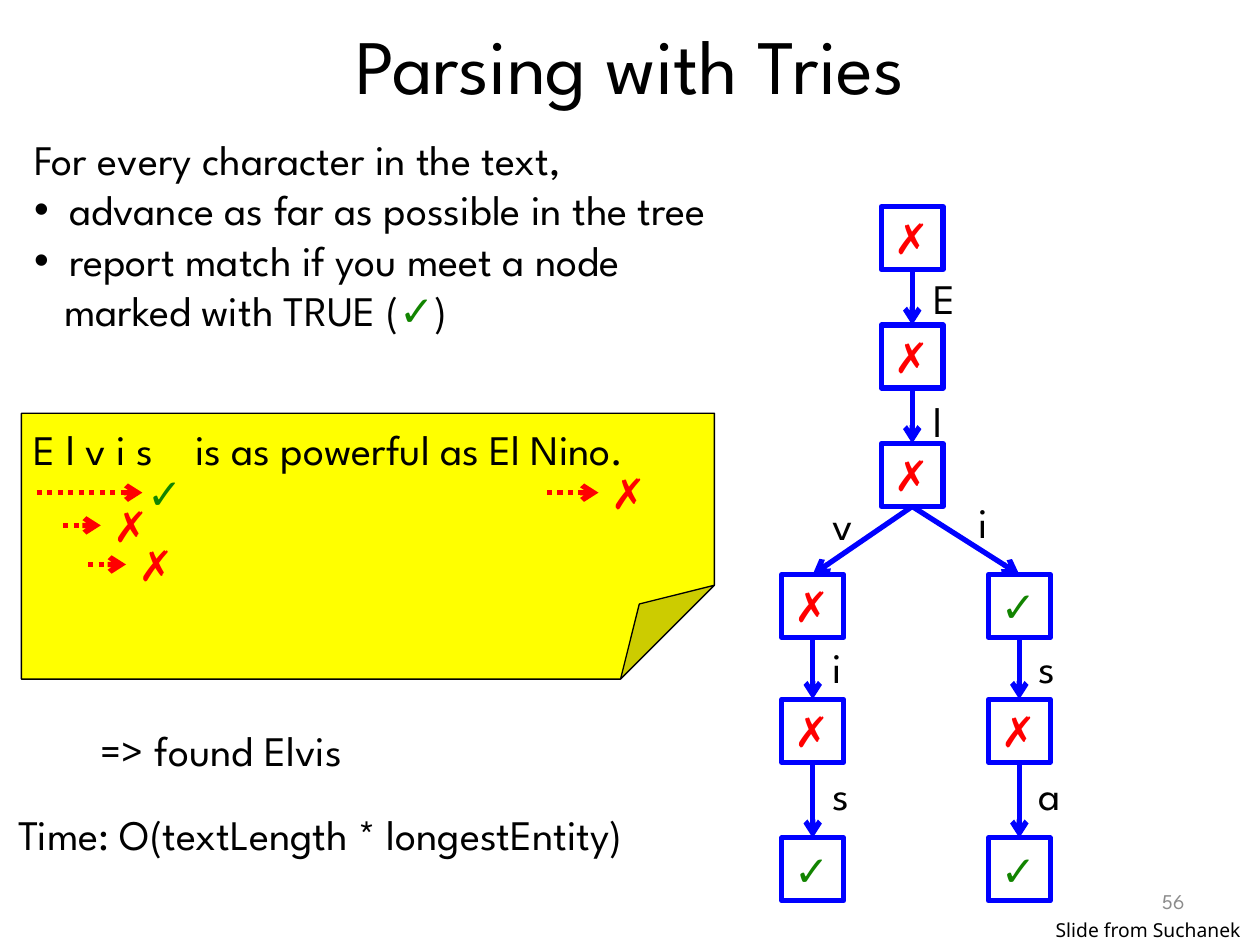
from lxml.etree import SubElement
from pptx import Presentation
from pptx.dml.color import RGBColor
from pptx.enum.dml import MSO_LINE
from pptx.enum.shapes import MSO_CONNECTOR, MSO_SHAPE
from pptx.enum.text import MSO_ANCHOR, MSO_AUTO_SIZE, PP_ALIGN
from pptx.oxml.ns import qn
from pptx.util import Inches, Pt

BLACK = RGBColor(0x00, 0x00, 0x00)
GRAY = RGBColor(0x8C, 0x8C, 0x8C)
RED = RGBColor(0xFF, 0x00, 0x00)
GREEN = RGBColor(0x12, 0x84, 0x00)
BLUE = RGBColor(0x00, 0x01, 0xFF)
YELLOW = RGBColor(0xFF, 0xFF, 0x00)
FONT = "League Spartan"
YES, NO = "✓", "✗"
MARK_COLORS = {YES: GREEN, NO: RED}
BOTTOM, TOP = 2, 0

# Content: (left margin, bulleted, runs)
TITLE = "Parsing with Tries"
STEPS = [
    (0, False, ["For every character in the text,"]),
    (0.28, True, ["advance as far as possible in the tree"]),
    (0.28, True, ["report match if you meet a node"]),
    (0.24, False, ["marked with TRUE (", YES, ")"]),
]
NOTE = "E l v i s\tis as powerful as El Nino."
NOTE_TAB = 1.28
# Scans over the note: arrow start, arrow end, height, mark, mark left
SCANS = [
    (0.29, 1.13, 3.91, YES, 1.07),
    (0.5, 0.8, 4.17, NO, 0.8),
    (0.7, 1, 4.48, NO, 1),
    (4.34, 4.75, 3.91, NO, 4.75),
]
RESULTS = [("=> found Elvis", 0.7, 5.7, 3.17),
           ("Time: O(textLength * longestEntity)", 0.05, 6.37, 6.03)]

# Trie: prefix -> (centre x, top, mark)
STEM, LEFT, RIGHT = 7.24, 6.45, 8.09
NODE_W, NODE_H = 0.49, 0.5
NODES = {
    "": (STEM, 1.64, NO),
    "E": (STEM, 2.58, NO),
    "El": (STEM, 3.52, NO),
    "Elv": (LEFT, 4.56, NO),
    "Elvi": (LEFT, 5.55, NO),
    "Elvis": (LEFT, 6.65, YES),
    "Eli": (RIGHT, 4.56, YES),
    "Elis": (RIGHT, 5.55, NO),
    "Elisa": (RIGHT, 6.65, YES),
}
# Edge letter position, by the prefix the edge leads to
LETTERS = {
    "E": (7.31, 2.11), "El": (7.31, 3.09),
    "Elv": (6.51, 3.91), "Elvi": (6.51, 5.04), "Elvis": (6.51, 6.05),
    "Eli": (7.67, 3.89), "Elis": (8.14, 5.04), "Elisa": (8.14, 6.05),
}


def add_span(para, text, size=24, color=BLACK, font=FONT):
    span = para.add_run()
    span.text = text
    span.font.name = font
    span.font.size = Pt(size)
    span.font.color.rgb = color


def add_text(page, text, left, top, width, height=0.5, wrap=True,
             align=PP_ALIGN.LEFT, **style):
    box = page.shapes.add_textbox(*map(Inches, (left, top, width, height)))
    box.text_frame.word_wrap = wrap
    para = box.text_frame.paragraphs[0]
    para.alignment = align
    add_span(para, text, **style)
    return box


def add_arrow(page, start, end, color):
    arrow = page.shapes.add_connector(
        MSO_CONNECTOR.STRAIGHT, *map(Inches, (*start, *end)))
    arrow.line.color.rgb = color
    arrow.line.width = Pt(3)
    SubElement(arrow.line._get_or_add_ln(), qn("a:tailEnd"), type="arrow")
    SubElement(arrow._element.spPr, qn("a:effectLst"))
    return arrow


def add_shape(page, kind, left, top, width, height, line, weight):
    shape = page.shapes.add_shape(
        kind, *map(Inches, (left, top, width, height)))
    shape.shadow.inherit = False
    shape.line.color.rgb = line
    shape.line.width = Pt(weight)
    shape.text_frame.vertical_anchor = MSO_ANCHOR.TOP
    shape.text_frame.paragraphs[0].alignment = PP_ALIGN.LEFT
    return shape


def place(shape, left, top, width, height):
    shape.left, shape.top = Inches(left), Inches(top)
    shape.width, shape.height = Inches(width), Inches(height)


def add_steps(body):
    place(body, 0.17, 1.01, 9.83, 2.12)
    frame = body.text_frame
    frame.auto_size = MSO_AUTO_SIZE.NONE
    for index, (margin, bulleted, texts) in enumerate(STEPS):
        para = frame.add_paragraph() if index else frame.paragraphs[0]
        para.space_before = Pt(0)
        props = para._p.get_or_add_pPr()
        props.set("marL", str(Inches(margin)))
        props.set("indent", str(-Inches(margin) if bulleted else 0))
        if bulleted:
            SubElement(props, qn("a:buChar"), char="•")
        else:
            SubElement(props, qn("a:buNone"))
        for text in texts:
            add_span(para, text, color=MARK_COLORS.get(text, BLACK))


def add_note(page):
    note = add_shape(page, MSO_SHAPE.FOLDED_CORNER,
                     0.17, 3.28, 5.5, 2.11, BLACK, 0.75)
    # Size of the folded corner
    guides = note._element.spPr.find(qn("a:prstGeom")).get_or_add_avLst()
    SubElement(guides, qn("a:gd"), name="adj", fmla="val 35300")
    note.fill.solid()
    note.fill.fore_color.rgb = YELLOW
    frame = note.text_frame
    frame.margin_top, frame.margin_bottom = Inches(0.08), 0
    para = frame.paragraphs[0]
    tabs = SubElement(para._p.get_or_add_pPr(), qn("a:tabLst"))
    SubElement(tabs, qn("a:tab"), pos=str(Inches(NOTE_TAB)), algn="l")
    add_span(para, NOTE)
    for start, end, y, mark, left in SCANS:
        arrow = add_arrow(page, (start, y), (end, y), RED)
        arrow.line.dash_style = MSO_LINE.ROUND_DOT
        add_text(page, mark, left, y - 0.25, 0.6, color=MARK_COLORS[mark])


def add_trie(page):
    boxes = {}
    for prefix, (center, top, mark) in NODES.items():
        box = add_shape(page, MSO_SHAPE.RECTANGLE, center - NODE_W / 2, top,
                        NODE_W, NODE_H, BLUE, 3)
        box.fill.background()
        add_span(box.text_frame.paragraphs[0], mark, color=MARK_COLORS[mark])
        boxes[prefix] = box
    for prefix, (left, top) in LETTERS.items():
        edge = add_arrow(page, (0, 0), (0, 0), BLUE)
        edge.begin_connect(boxes[prefix[:-1]], BOTTOM)
        edge.end_connect(boxes[prefix], TOP)
        add_text(page, prefix[-1], left, top, 0.36)


def main():
    deck = Presentation()
    deck.slide_width, deck.slide_height = Inches(10), Inches(7.5)
    page = deck.slides.add_slide(deck.slide_layouts[1])

    # Title and steps
    title = page.shapes.title
    place(title, 0.5, 0, 9, 1.01)
    title.text_frame.vertical_anchor = MSO_ANCHOR.MIDDLE
    title.text_frame.paragraphs[0].alignment = PP_ALIGN.CENTER
    add_span(title.text_frame.paragraphs[0], TITLE, size=44)
    add_steps(page.placeholders[1])

    # Example text, result and running time
    add_note(page)
    for text, left, top, width in RESULTS:
        add_text(page, text, left, top, width)

    add_trie(page)

    # Page number and credit
    number = add_text(page, "56", 7.17, 6.95, 2.33, 0.4,
                      align=PP_ALIGN.RIGHT, size=12, color=GRAY)
    number.text_frame.vertical_anchor = MSO_ANCHOR.MIDDLE
    add_text(page, "Slide from Suchanek", 8.28, 7.24, 1.72, 0.29,
             wrap=False, size=11, font="Noto Sans")

    deck.save("out.pptx")


if __name__ == "__main__":
    main()
